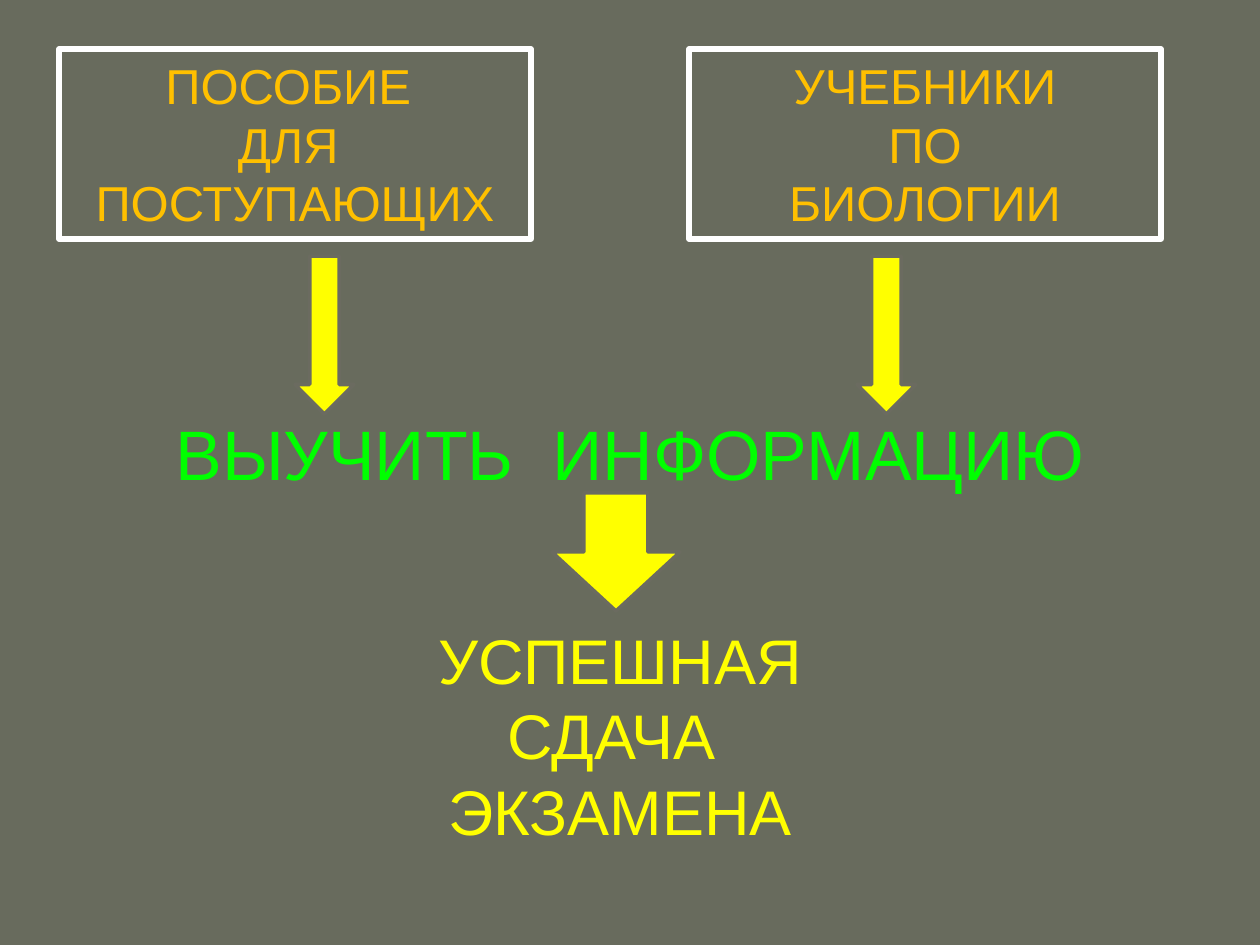
from pptx import Presentation
from pptx.dml.color import RGBColor
from pptx.enum.shapes import MSO_SHAPE
from pptx.enum.text import MSO_ANCHOR, MSO_AUTO_SIZE, PP_ALIGN
from pptx.util import Emu, Pt

RECTANGLE = MSO_SHAPE.RECTANGLE
DOWN_ARROW = MSO_SHAPE.DOWN_ARROW
TOP = MSO_ANCHOR.TOP
GROW = MSO_AUTO_SIZE.SHAPE_TO_FIT_TEXT
CENTER = PP_ALIGN.CENTER

EMU_PER_PX = 914400 / 126
FONT = "Arial"
BACKGROUND = RGBColor(0x68, 0x6B, 0x5D)
WHITE = RGBColor(0xFF, 0xFF, 0xFF)
ORANGE = RGBColor(0xFF, 0xC0, 0x00)
YELLOW = RGBColor(0xFF, 0xFF, 0x00)
GREEN = RGBColor(0x00, 0xFF, 0x00)
ARROW_LINE = RGBColor(0x6B, 0x6B, 0x60)

SOURCES = [
    (59, ["ПОСОБИЕ ", "ДЛЯ ", "ПОСТУПАЮЩИХ"]),
    (689, ["УЧЕБНИКИ", "ПО", "БИОЛОГИИ"]),
]
ARROWS = [(295, 256, 59, 158), (857, 256, 59, 158), (552, 493, 128, 118)]


def px(*lengths):
    return [Emu(round(length * EMU_PER_PX)) for length in lengths]


def write_lines(shape, lines, size, color):
    frame = shape.text_frame
    frame.word_wrap = True
    frame.auto_size = GROW
    frame.vertical_anchor = TOP
    for index, line in enumerate(lines):
        paragraph = frame.add_paragraph() if index else frame.paragraphs[0]
        paragraph.alignment = CENTER
        run = paragraph.add_run()
        run.text = line
        run.font.name = FONT
        run.font.size = Pt(size)
        run.font.color.rgb = color


def add_outlined_shape(slide, kind, box, line_color, line_width):
    shape = slide.shapes.add_shape(kind, *px(*box))
    shape.shadow.inherit = False
    shape.line.color.rgb = line_color
    shape.line.width = Pt(line_width)
    return shape


def add_source_box(slide, left, lines):
    shape = add_outlined_shape(slide, RECTANGLE, (left, 49, 472, 190), WHITE, 3)
    shape.fill.background()
    write_lines(shape, lines, 28, ORANGE)


def add_arrow(slide, box):
    shape = add_outlined_shape(slide, DOWN_ARROW, box, ARROW_LINE, 2)
    shape.fill.solid()
    shape.fill.fore_color.rgb = YELLOW


def add_text(slide, box, lines, size, color):
    write_lines(slide.shapes.add_textbox(*px(*box)), lines, size, color)


def main():
    presentation = Presentation()
    presentation.slide_width, presentation.slide_height = px(1260, 945)
    slide = presentation.slides.add_slide(presentation.slide_layouts[6])
    slide.background.fill.solid()
    slide.background.fill.fore_color.rgb = BACKGROUND

    for left, lines in SOURCES:
        add_source_box(slide, left, lines)
    add_text(slide, (384, 615, 472, 242), ["УСПЕШНАЯ СДАЧА ", "ЭКЗАМЕНА"], 36, YELLOW)
    add_text(slide, (0, 404, 1260, 97), ["ВЫУЧИТЬ  ИНФОРМАЦИЮ"], 40, GREEN)
    for box in ARROWS:
        add_arrow(slide, box)

    presentation.save("out.pptx")


if __name__ == "__main__":
    main()
